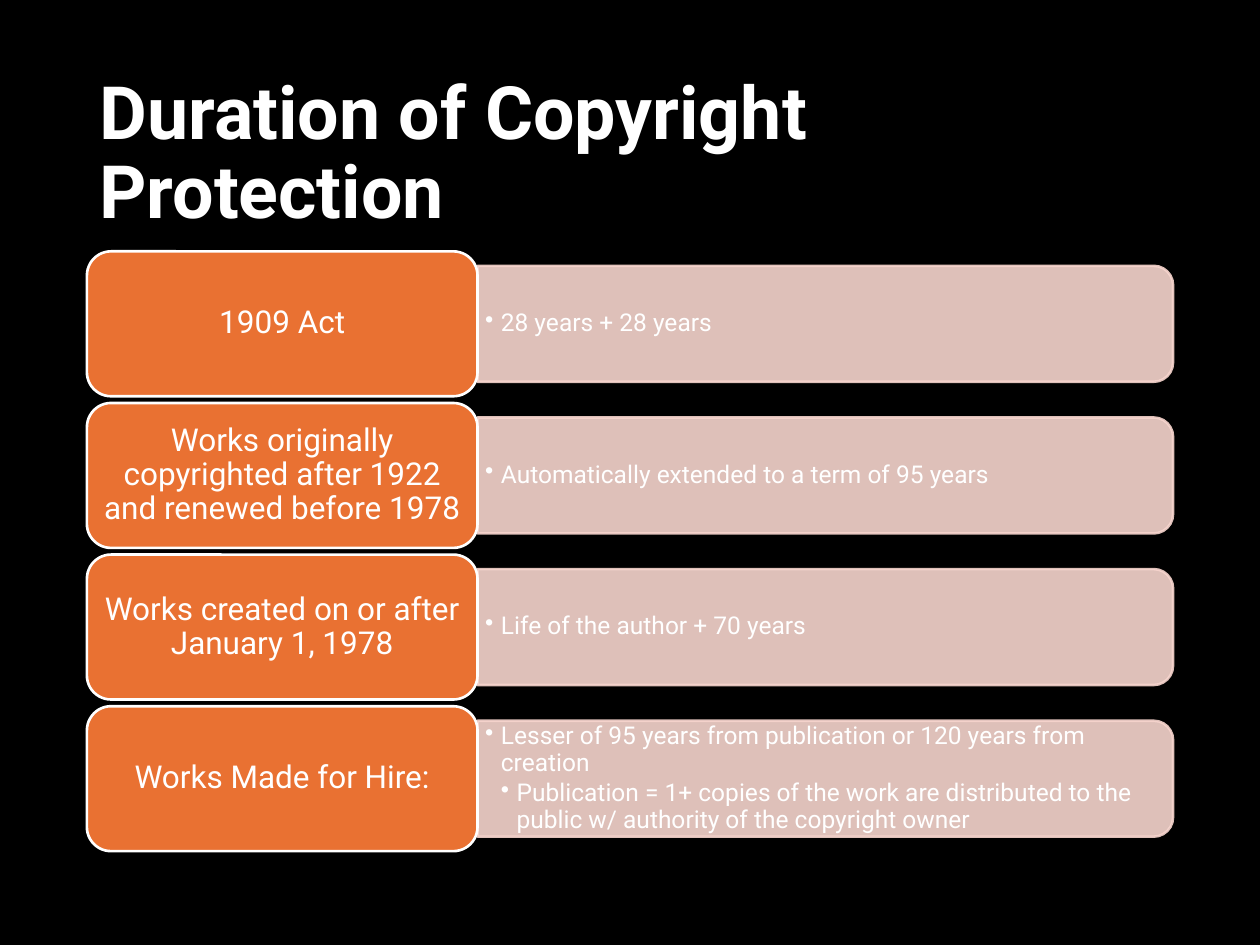
from dataclasses import dataclass

from lxml import etree
from pptx import Presentation
from pptx.dml.color import RGBColor
from pptx.enum.shapes import MSO_SHAPE
from pptx.enum.text import MSO_ANCHOR, MSO_AUTO_SIZE, PP_ALIGN
from pptx.oxml.ns import qn
from pptx.util import Inches, Pt

ROUND = MSO_SHAPE.ROUNDED_RECTANGLE
TAB = MSO_SHAPE.ROUND_2_SAME_RECTANGLE
MIDDLE = MSO_ANCHOR.MIDDLE
FIXED = MSO_AUTO_SIZE.NONE
LEFT = PP_ALIGN.LEFT
CENTER = PP_ALIGN.CENTER


@dataclass(frozen=True)
class Theme:
    font: str = "Roboto"
    back: str = "000000"
    ink: str = "FFFFFF"
    card: str = "E97132"
    bar: str = "F7D5CE"
    alpha: int = 90
    head: int = 42
    term: int = 18
    note: int = 14
    edge: float = 1.5


def write(frame, text, *, size, font, color, bold=False, align=LEFT,
          after=0, first=True, level=None, pad=(0.1, 0.05)):
    frame.word_wrap = True
    frame.auto_size = FIXED
    frame.vertical_anchor = MIDDLE
    frame.margin_left = frame.margin_right = Inches(pad[0])
    frame.margin_top = frame.margin_bottom = Inches(pad[1])
    para = frame.paragraphs[0] if first else frame.add_paragraph()
    para.alignment = align
    para.line_spacing = 0.9
    para.space_before = Pt(0)
    para.space_after = Pt(after)
    if level:
        para.level = level
        props = para._p.get_or_add_pPr()
        props.set("marL", str(Inches(0.125 * level)))
        props.set("indent", str(Inches(-0.125)))
        etree.SubElement(props, qn("a:buChar")).set("char", "•")
    run = para.add_run()
    run.text = text
    run.font.name = font
    run.font.size = Pt(size)
    run.font.bold = bold
    run.font.color.rgb = RGBColor.from_string(color)


class Deck:
    def __init__(self, theme):
        self.theme = theme
        self.file = Presentation()
        self.file.slide_width = Inches(10)
        self.file.slide_height = Inches(7.5)
        self.slide = self.file.slides.add_slide(self.file.slide_layouts[5])
        fill = self.slide.background.fill
        fill.solid()
        fill.fore_color.rgb = RGBColor.from_string(theme.back)

    def text(self, frame, words, size, **form):
        write(frame, words, size=size, font=self.theme.font,
              color=self.theme.ink, **form)

    def title(self, words, box):
        shape = self.slide.shapes.title
        shape.left, shape.top, shape.width, shape.height = map(Inches, box)
        self.text(shape.text_frame, words, self.theme.head, bold=True)

    def shape(self, kind, box, fill, line):
        shape = self.slide.shapes.add_shape(kind, *map(Inches, box))
        shape.shadow.inherit = False
        shape.fill.solid()
        shape.fill.fore_color.rgb = RGBColor.from_string(fill)
        shape.line.color.rgb = RGBColor.from_string(line)
        shape.line.width = Pt(self.theme.edge)
        return shape

    def bar(self, left, mid, width, height):
        box = (left + (width - height) / 2, mid - width / 2, height, width)
        shape = self.shape(TAB, box, self.theme.bar, self.theme.bar)
        shape.rotation = 90
        for color in shape._element.spPr.iter(qn("a:srgbClr")):
            alpha = etree.SubElement(color, qn("a:alpha"))
            alpha.set("val", str(self.theme.alpha * 1000))

    def list(self, items, box):
        frame = self.slide.shapes.add_textbox(*map(Inches, box)).text_frame
        size = self.theme.note
        for rank, words in enumerate(items):
            self.text(frame, words, size, after=size * 0.15, first=rank == 0,
                      level=rank + 1, pad=(0.06, 0.03))

    def card(self, words, box):
        shape = self.shape(ROUND, box, self.theme.card, self.theme.ink)
        self.text(shape.text_frame, words, self.theme.term, align=CENTER,
                  pad=(0.07, 0.04))

    def row(self, term, notes, mid):
        left, width, height = 0.69, 3.1, 1.15
        edge = left + width
        self.bar(edge, mid, 5.52, 0.92)
        self.list(notes, (edge, mid - 0.415, 5.48, 0.83))
        self.card(term, (left, mid - height / 2, width, height))


def main():
    rows = [
        ("1909 Act", ["28 years + 28 years"]),
        ("Works originally copyrighted after 1922 and renewed before 1978",
         ["Automatically extended to a term of 95 years"]),
        ("Works created on or after January 1, 1978",
         ["Life of the author + 70 years"]),
        ("Works Made for Hire:",
         ["Lesser of 95 years from publication or 120 years from creation",
          "Publication = 1+ copies of the work are distributed to the public "
          "w/ authority of the copyright owner"]),
    ]
    deck = Deck(Theme())
    deck.title("Duration of Copyright Protection", (0.69, 0.61, 8.62, 1.24))
    first, last = 2.57, 6.18
    step = (last - first) / (len(rows) - 1)
    for rank, (term, notes) in enumerate(rows):
        deck.row(term, notes, first + rank * step)
    deck.file.save("out.pptx")


if __name__ == "__main__":
    main()
